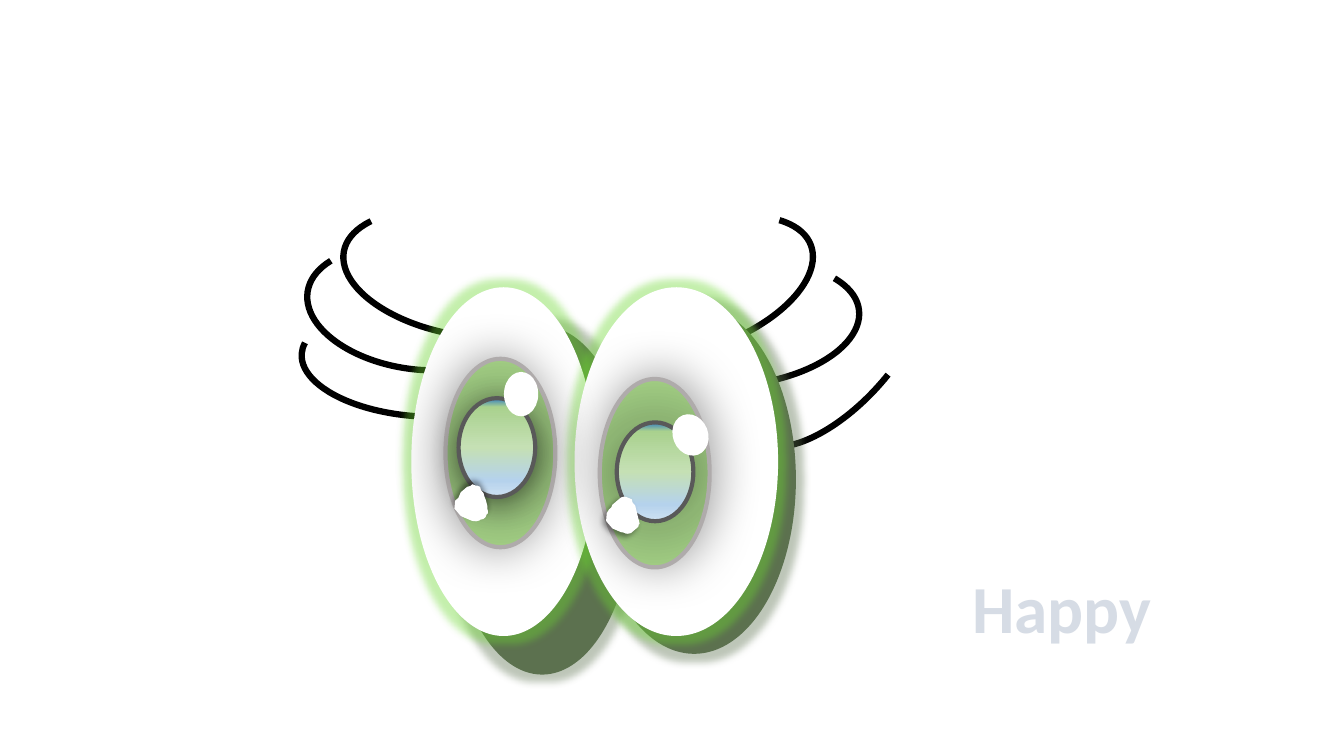
"""Build a slide with a pair of cartoon eyes, curved lashes and a mood label."""
from pptx import Presentation
from pptx import util as u
from pptx.dml.color import RGBColor
from pptx.enum import shapes, text
from pptx.oxml import parse_xml
from pptx.oxml.ns import nsdecls

BLACK = RGBColor(0x00, 0x00, 0x00)
WHITE = RGBColor(0xFF, 0xFF, 0xFF)
IRIS_RIM = RGBColor(0xAF, 0xAB, 0xAB)
PUPIL_RIM = RGBColor(0x59, 0x59, 0x59)
LABEL = RGBColor(0xD6, 0xDC, 0xE5)
EYE_SHADE = RGBColor(0x5C, 0x71, 0x4F)
GLOW = RGBColor(0x6C, 0xD8, 0x30)

IRIS_STOPS = [(0, "637F51"), (50, "8DB473"), (100, "A8D689")]
PUPIL_STOPS = [(0, "327DC2"), (9, "A9D18E"), (50, "C5E0B4"), (83, "B5D2EC"), (100, "CEE1F2")]
CENTRE = ('<a:path path="circle"><a:fillToRect l="50000" t="50000" '
          'r="50000" b="50000"/></a:path>')
DOWN = '<a:lin ang="5400000" scaled="0"/>'

# box, rotation, flips, start and end adjustments
LASHES = [
    ((511.9, 213.1, 169.2, 77.8), 133.1, "", (149.626, 0)),
    ((445, 187.9, 169.2, 87.1), 353.3, "V", (162, 11.657)),
    ((415.4, 161.3, 169.2, 87.1), 339.5, "V", (162, 11.657)),
    ((215.3, 219.6, 169.2, 77.8), 183.9, "", (162, 3.31)),
    ((218.9, 176.4, 154.1, 87.1), 8.7, "HV", (144.76, 12.471)),
    ((244.1, 151.9, 169.9, 87.1), 10.9, "HV", (162, 11.657)),
]
# box, shadow distance
EYES = [((293.8, 205.2, 131.8, 249.1), 39), ((410.4, 205.2, 145.4, 249.1), 18)]
IRIS_SIZE, PUPIL_SIZE = (78.5, 134.6), (54.7, 70.6)
# left, top, shadow direction
IRISES = [(318.2, 256.3, 180), (428.4, 270.7, 315)]
LEFT_PUPIL, RIGHT_PUPIL = (327.6, 284.4), (440.6, 301.7)
LEFT_SPARK, RIGHT_SPARK = (360, 265.7, 24.5, 31.7), (478.1, 298.1, 30.2, 25.2)
LEFT_GLINT, RIGHT_GLINT = (325.4, 347, 270), (433.4, 355.7, 135)
GLINT_START = (4.3, 21.6)
GLINT_CURVES = [
    ((0, 16.6), (-0.7, 7.9), (2.2, 5)),
    ((5, 2.2), (18.7, -1.4), (23, 3.6)),
    ((26.6, 8.6), (20.9, 20.2), (17.3, 23.8)),
    ((14.4, 26.6), (8.6, 26.6), GLINT_START),
]
LABEL_BOX = (668.9, 401, 179.3, 65.5)

prs = Presentation()
prs.slide_width, prs.slide_height = u.Pt(960), u.Pt(540)
s = prs.slides.add_slide(prs.slide_layouts[6])


def pts(values):
    return [u.Pt(v) for v in values]


def colour_xml(colour, alpha):
    return f'<a:srgbClr val="{colour}"><a:alpha val="{alpha * 1000}"/></a:srgbClr>'


def add_effect(sp, tag, attrs, colour, alpha):
    sp.element.spPr.effectLst.append(parse_xml(
        f'<a:{tag} {nsdecls("a")} {attrs}>{colour_xml(colour, alpha)}</a:{tag}>'))


def add_shadow(sp, colour, alpha, blur, dist, angle):
    attrs = (f'blurRad="{u.Pt(blur)}" dist="{u.Pt(dist)}" dir="{angle * 60000}" '
             'algn="ctr" rotWithShape="0"')
    add_effect(sp, "outerShdw", attrs, colour, alpha)


def paint(sp, fill=None, rim=None, width=3):
    sp.shadow.inherit = False
    if fill is None:
        sp.fill.background()
    else:
        sp.fill.solid()
        sp.fill.fore_color.rgb = fill
    if rim is None:
        sp.line.fill.background()
    else:
        sp.line.color.rgb = rim
        sp.line.width = u.Pt(width)
    return sp


def add_oval(box, fill=WHITE, rim=None):
    return paint(s.shapes.add_shape(shapes.MSO_SHAPE.OVAL, *pts(box)), fill, rim)


def add_gradient_oval(box, rim, stops, direction):
    sp = add_oval(box, None, rim)
    marks = "".join(f'<a:gs pos="{pos * 1000}"><a:srgbClr val="{c}"/></a:gs>'
                    for pos, c in stops)
    gradient = parse_xml(f'<a:gradFill {nsdecls("a")} rotWithShape="1">'
                         f'<a:gsLst>{marks}</a:gsLst>{direction}</a:gradFill>')
    props = sp.element.spPr
    props.replace(props.find("{*}noFill"), gradient)
    return sp


def add_pupil(place):
    return add_gradient_oval(place + PUPIL_SIZE, PUPIL_RIM, PUPIL_STOPS, DOWN)


def curve_points(start, curves, steps=10):
    for a, b, end in curves:
        for i in range(1, steps + 1):
            t = i / steps
            weights = ((1 - t) ** 3, 3 * t * (1 - t) ** 2, 3 * t * t * (1 - t), t ** 3)
            yield tuple(sum(w * q[k] for w, q in zip(weights, (start, a, b, end)))
                        for k in (0, 1))
        start = end


def add_glint(left, top, angle):
    x, y = GLINT_START
    outline = [(left + px, top + py) for px, py in curve_points(GLINT_START, GLINT_CURVES)]
    builder = s.shapes.build_freeform(left + x, top + y, scale=u.Pt(1))
    builder.add_line_segments(outline, close=True)
    sp = paint(builder.convert_to_shape(), WHITE)
    sp.rotation = 319.8
    add_shadow(sp, BLACK, 40, 4, 3, angle)


def add_lash(box, rotation, flips, adjustments):
    sp = paint(s.shapes.add_shape(shapes.MSO_SHAPE.ARC, *pts(box)), None, BLACK, 4.5)
    sp.rotation = rotation
    for axis in flips:
        sp.element.spPr.xfrm.set(f"flip{axis}", "1")
    for i, value in enumerate(adjustments):
        sp.adjustments[i] = value


def add_label(box, words):
    tf = s.shapes.add_textbox(*pts(box)).text_frame
    tf.word_wrap = True
    tf.auto_size = text.MSO_AUTO_SIZE.SHAPE_TO_FIT_TEXT
    p = tf.paragraphs[0]
    p.text = words
    p.alignment = text.PP_ALIGN.CENTER
    p.font.name, p.font.size, p.font.bold = "Calibri", u.Pt(48), True
    p.font.color.rgb = LABEL


add_lash(*LASHES[0])
add_label(LABEL_BOX, "Happy")
for lash in LASHES[1:]:
    add_lash(*lash)
for box, distance in EYES:
    eye = add_oval(box)
    add_effect(eye, "glow", f'rad="{u.Pt(11)}"', GLOW, 40)
    add_shadow(eye, EYE_SHADE, 100, 0, distance, 45)
for left, top, angle in IRISES:
    iris = add_gradient_oval((left, top) + IRIS_SIZE, IRIS_RIM, IRIS_STOPS, CENTRE)
    add_shadow(iris, BLACK, 40, 35, 3, angle)
add_shadow(add_pupil(LEFT_PUPIL), BLACK, 43, 22, 4, 90)
add_glint(*LEFT_GLINT)
add_oval(LEFT_SPARK)
add_pupil(RIGHT_PUPIL)
add_glint(*RIGHT_GLINT)
add_oval(RIGHT_SPARK).rotation = 68.8

prs.save("out.pptx")
